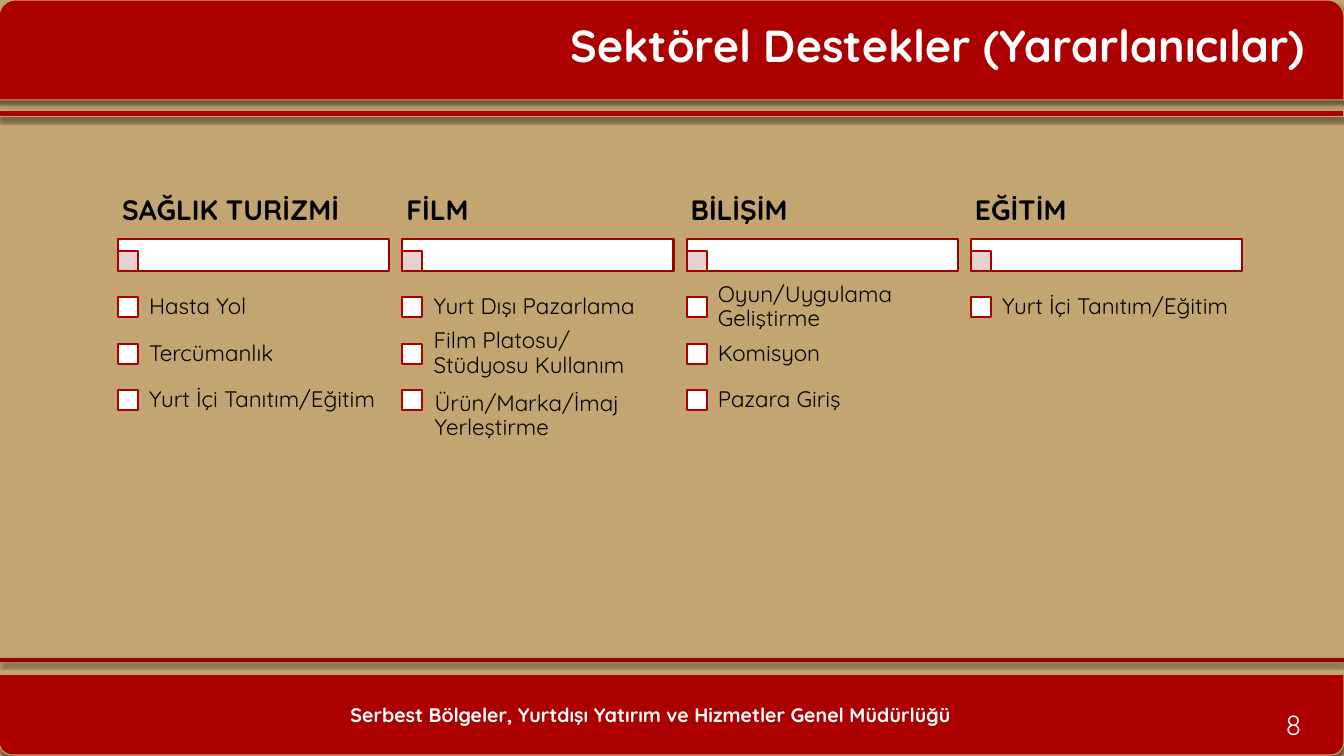
from lxml import etree
from pptx import Presentation
from pptx import util as u
from pptx.dml.color import RGBColor
from pptx.enum import shapes, text
from pptx.oxml import ns

WIDE, HIGH = 13.33, 7.5
FONT = "Quicksand"
HUES = {"sand": "C3A572", "red": "AC0000", "dark": "990003", "edge": "9C0000",
        "pink": "E3CCCC", "white": "FFFFFF", "black": "000000"}
KIND = shapes.MSO_SHAPE
SIDE = text.PP_ALIGN

# Grid of the four sectors, in inches
LEFT, STEP, SPAN = 1.17, 2.82, 2.69
HEAD, BAR, LIST, ROW = 1.81, 2.37, 2.82, 0.46
TICK = 0.2

SECTORS = {
    "SAĞLIK TURİZMİ": ["Hasta Yol", "Tercümanlık", "Yurt İçi Tanıtım/Eğitim"],
    "FİLM": ["Yurt Dışı Pazarlama", "Film Platosu/ Stüdyosu Kullanım",
             "Ürün/Marka/İmaj Yerleştirme"],
    "BİLİŞİM": ["Oyun/Uygulama Geliştirme", "Komisyon", "Pazara Giriş"],
    "EĞİTİM": ["Yurt İçi Tanıtım/Eğitim"],
}
SHIFTS = {("FİLM", 2): (0.01, 0.16)}

deck = Presentation()
deck.slide_width, deck.slide_height = u.Inches(WIDE), u.Inches(HIGH)
slide = deck.slides.add_slide(deck.slide_layouts[5])
slide.background.fill.solid()
slide.background.fill.fore_color.rgb = RGBColor.from_string(HUES["sand"])
tree = slide.shapes


def draw(kind, spot, fill, edge, width):
    """Add a preset shape with a flat fill and outline."""
    shape = tree.add_shape(kind, *map(u.Inches, spot))
    shape.shadow.inherit = False
    shape.fill.solid()
    shape.fill.fore_color.rgb = RGBColor.from_string(HUES[fill])
    shape.line.color.rgb = RGBColor.from_string(HUES[edge])
    shape.line.width = u.Pt(width)
    return shape


def write(words, spot, size, hue, bold=False, side=SIDE.LEFT, pads=(0.1, 0.05), lead=1.0, box=None):
    """Put one formatted paragraph in a new text box, or in the given box."""
    box = box or tree.add_textbox(0, 0, 0, 0)
    box.left, box.top, box.width, box.height = map(u.Inches, spot)
    frame = box.text_frame
    frame.text = words
    frame.word_wrap = True
    frame.auto_size = text.MSO_AUTO_SIZE.NONE
    frame.vertical_anchor = text.MSO_ANCHOR.MIDDLE
    frame.margin_left = frame.margin_right = u.Inches(pads[0])
    frame.margin_top = frame.margin_bottom = u.Inches(pads[1])
    line = frame.paragraphs[0]
    line.alignment, line.line_spacing = side, lead
    font = line.runs[0].font
    font.name, font.size, font.bold = FONT, u.Pt(size), bold
    font.color.rgb = RGBColor.from_string(HUES[hue])


# Header and footer bands
foot = draw(KIND.ROUND_2_SAME_RECTANGLE, (-0.01, 6.69, 13.34, 0.8), "red", "sand", 0.75)
foot.rotation = 180
top = draw(KIND.ROUND_2_SAME_RECTANGLE, (-0.01, 0, 13.34, 0.99), "red", "sand", 0.75)
strip = draw(KIND.RECTANGLE, (0, 1.1, WIDE, 0.06), "red", "sand", 0.75)
rule = tree.add_connector(shapes.MSO_CONNECTOR.STRAIGHT, 0, u.Inches(6.55),
                          u.Inches(WIDE), u.Inches(6.55))
rule.line.color.rgb = RGBColor.from_string(HUES["dark"])
rule.line.width = u.Pt(3)

for band in (foot, top, strip, rule):
    props = band.element.spPr
    for old in props.findall(ns.qn("a:effectLst")):
        props.remove(old)
    glow = etree.SubElement(props, ns.qn("a:effectLst"))
    shade = etree.SubElement(glow, ns.qn("a:outerShdw"), blurRad=str(u.Pt(3)),
                             dist=str(u.Pt(2)), dir="5400000", rotWithShape="0")
    tone = etree.SubElement(shade, ns.qn("a:srgbClr"), val=HUES["black"])
    etree.SubElement(tone, ns.qn("a:alpha"), val="45000")

write("Serbest Bölgeler, Yurtdışı Yatırım ve Hizmetler Genel Müdürlüğü",
      (0.21, 6.93, 12.49, 0.33), 14, "white", True, SIDE.CENTER)

# The title placeholder moves in front of the header band
title = tree.title
title.element.getparent().append(title.element)
write("Sektörel Destekler (Yararlanıcılar)", (4.64, 0.21, 8.41, 0.47),
      32, "white", True, SIDE.RIGHT, box=title)
write("8", (12.54, 6.93, 0.58, 0.51), 20, "white", side=SIDE.CENTER)

# Sectors with their supports
for col, (name, items) in enumerate(SECTORS.items()):
    x = LEFT + col * STEP
    draw(KIND.RECTANGLE, (x, BAR, SPAN, 0.32), "white", "edge", 1.5)
    mark = draw(KIND.RECTANGLE, (x, BAR + 0.12, TICK, TICK), "pink", "red", 1.5)
    tint = mark.element.spPr.find(ns.qn("a:solidFill"))[0]
    etree.SubElement(tint, ns.qn("a:alpha"), val="90000")
    write(name, (x, HEAD, SPAN, 0.57), 20, "black", True, pads=(0.04, 0.03), lead=0.9)
    for row, item in enumerate(items):
        y = LIST + row * ROW
        right, down = SHIFTS.get((name, row), (0, 0))
        draw(KIND.RECTANGLE, (x, y + 0.13, TICK, TICK), "white", "red", 1.5)
        write(item, (x + 0.19 + right, y + down, 2.5, ROW), 16, "black",
              pads=(0.12, 0.12), lead=0.9)

deck.save("out.pptx")
